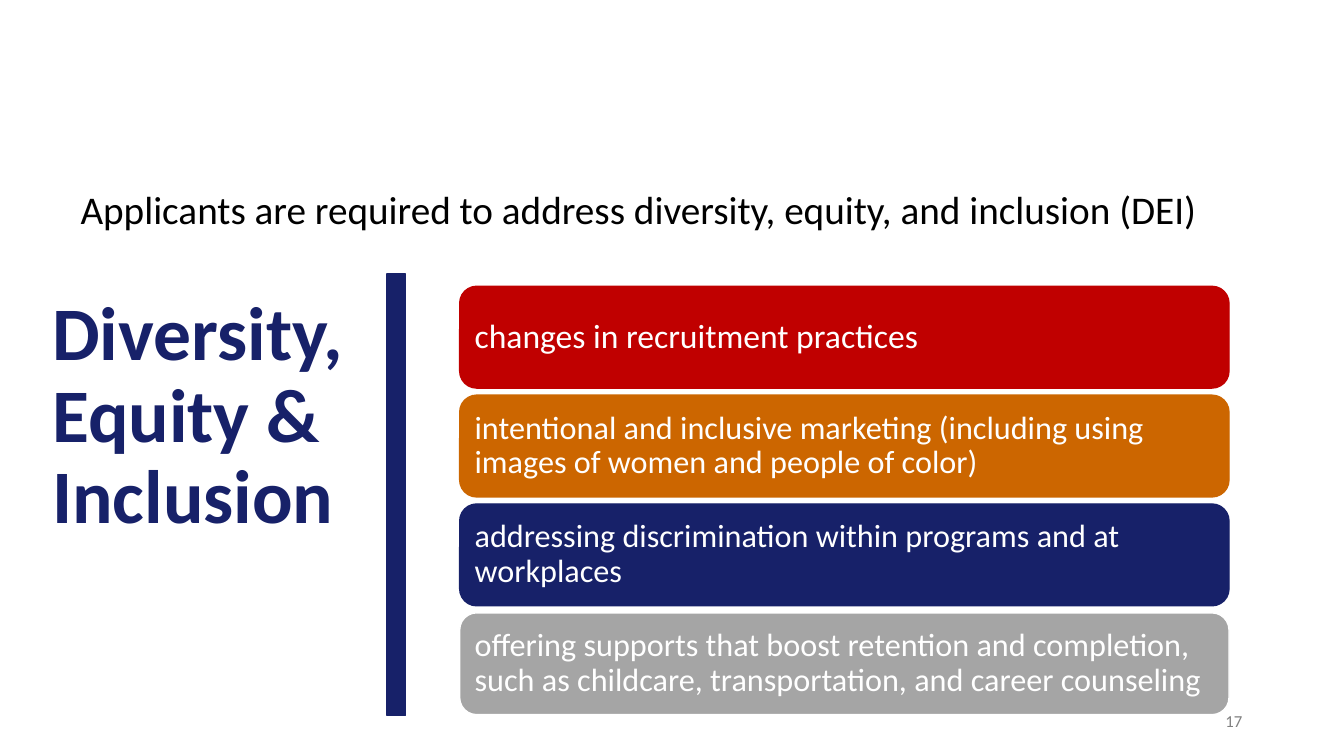
import pptx
import pptx.dml.color
import pptx.enum.shapes
import pptx.enum.text
import pptx.util
from dataclasses import dataclass
from pptx.util import Inches

ALIGN = pptx.enum.text.PP_ALIGN
ANCHOR = pptx.enum.text.MSO_ANCHOR
SHAPE = pptx.enum.shapes.MSO_SHAPE


@dataclass(frozen=True)
class Theme:
    font: str = "Calibri"
    navy: str = "172169"
    red: str = "C00000"
    orange: str = "CC6600"
    gray: str = "A5A5A5"
    white: str = "FFFFFF"
    black: str = "000000"
    number_gray: str = "808080"
    title_size: int = 54
    intro_size: int = 28
    first_card_size: int = 24
    card_size: int = 23
    number_size: int = 12


THEME = Theme()

PRACTICES = [
    ("changes in recruitment practices",
     THEME.red, THEME.red, THEME.first_card_size),
    ("intentional and inclusive marketing (including using images of women and people of color)",
     THEME.orange, THEME.orange, THEME.card_size),
    ("addressing discrimination within programs and at workplaces",
     THEME.navy, THEME.navy, THEME.card_size),
    ("offering supports that boost retention and completion, such as childcare, "
     "transportation, and career counseling",
     THEME.gray, THEME.white, THEME.card_size),
]
CARD_TOP = 2.84
CARD_PITCH = 1.08


def rgb(value):
    return pptx.dml.color.RGBColor.from_string(value)


def write_text(shape, text, size, color, bold=False, align=ALIGN.LEFT,
               anchor=ANCHOR.MIDDLE, line_spacing=1.0):
    frame = shape.text_frame
    frame.word_wrap = True
    frame.vertical_anchor = anchor
    para = frame.paragraphs[0]
    para.alignment = align
    para.line_spacing = line_spacing
    span = para.add_run()
    span.text = text
    span.font.name = THEME.font
    span.font.size = pptx.util.Pt(size)
    span.font.bold = bold
    span.font.color.rgb = rgb(color)


def add_text(page, left, top, width, height, text, size, color, **style):
    box = page.shapes.add_textbox(Inches(left), Inches(top), Inches(width), Inches(height))
    write_text(box, text, size, color, **style)


def add_block(page, kind, left, top, width, height, fill, line):
    block = page.shapes.add_shape(kind, Inches(left), Inches(top), Inches(width), Inches(height))
    block.shadow.inherit = False
    block.fill.solid()
    block.fill.fore_color.rgb = rgb(fill)
    block.line.color.rgb = rgb(line)
    block.line.width = pptx.util.Pt(1)
    return block


def add_card(page, top, text, fill, line, size):
    card = add_block(page, SHAPE.ROUNDED_RECTANGLE, 4.56, top, 7.63, 1.01, fill, line)
    frame = card.text_frame
    frame.margin_left = frame.margin_right = Inches(0.1)
    frame.margin_top = frame.margin_bottom = Inches(0.1)
    write_text(card, text, size, THEME.white, line_spacing=0.9)


def main():
    deck = pptx.Presentation()
    deck.slide_width = Inches(13.33)
    deck.slide_height = Inches(7.5)
    page = deck.slides.add_slide(deck.slide_layouts[6])

    add_text(page, 0.42, 1.09, 3.74, 6.11, "Diversity, Equity & Inclusion",
             THEME.title_size, THEME.navy, bold=True, line_spacing=0.9)
    for index, (text, fill, line, size) in enumerate(PRACTICES):
        add_card(page, CARD_TOP + index * CARD_PITCH, text, fill, line, size)
    add_text(page, 9.42, 6.95, 3, 0.4, "17", THEME.number_size, THEME.number_gray,
             align=ALIGN.RIGHT)
    add_text(page, 0.7, 1.79, 11.59, 0.57,
             "Applicants are required to address diversity, equity, and inclusion (DEI)",
             THEME.intro_size, THEME.black, anchor=ANCHOR.TOP)
    add_block(page, SHAPE.RECTANGLE, 3.84, 2.72, 0.18, 4.38, THEME.navy, THEME.navy)

    deck.save("out.pptx")


if __name__ == "__main__":
    main()
